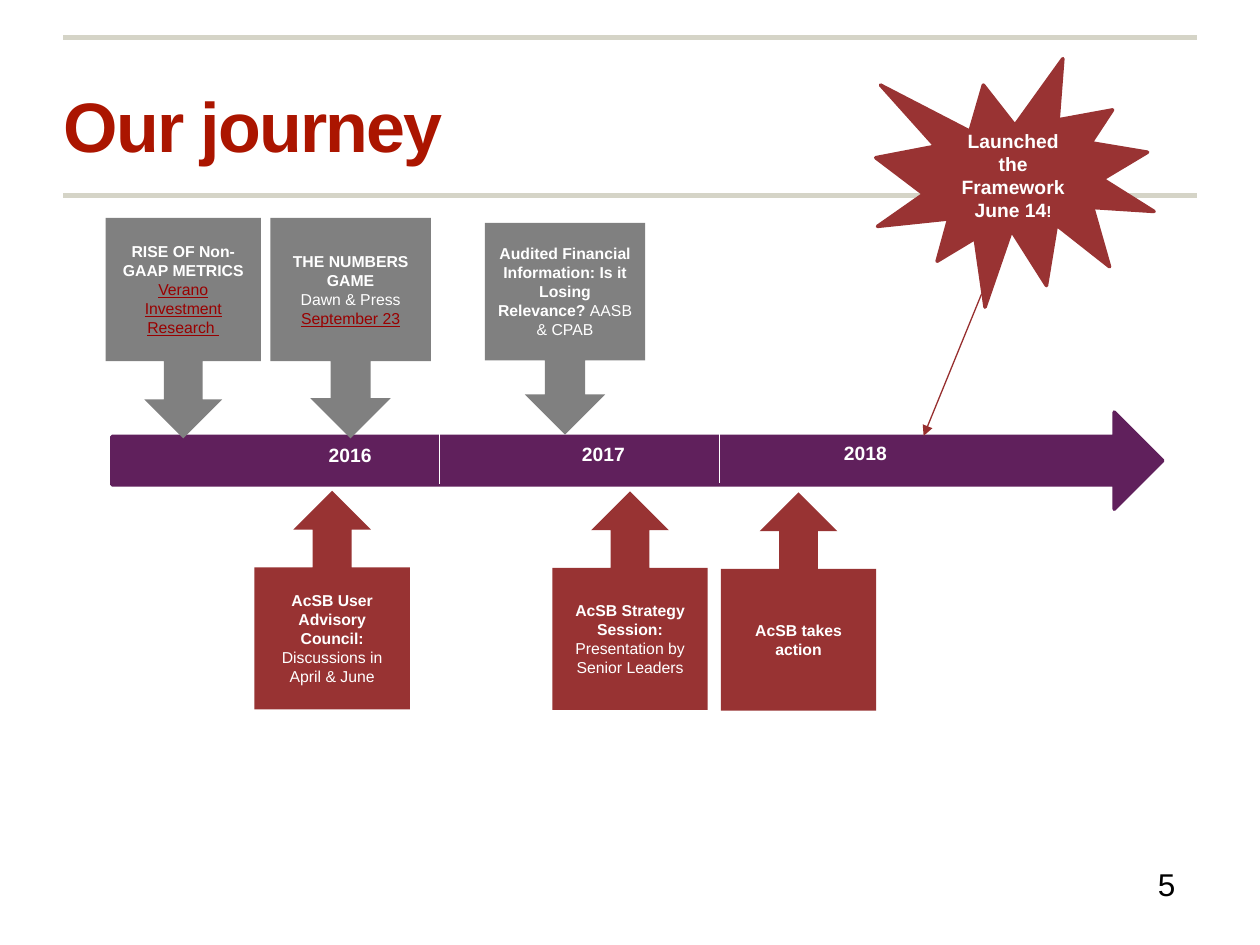
"""Build the timeline slide "Our journey"."""
import pptx
import pptx.util
import pptx.dml.color
import pptx.enum.shapes
import pptx.enum.text
import pptx.oxml.ns
import lxml.etree

Pt = pptx.util.Pt
Kind = pptx.enum.shapes.MSO_SHAPE
Align = pptx.enum.text.PP_ALIGN
Anchor = pptx.enum.text.MSO_ANCHOR
qn = pptx.oxml.ns.qn
tint = {"rule": "D5D4C7", "title": "AB1500", "bar": "60205C", "gray": "808080",
        "red": "983333", "burst": "993333", "arrow": "972F2F", "link": "990000",
        "white": "FFFFFF", "black": "000000"}
tint = {key: pptx.dml.color.RGBColor.from_string(code) for key, code in tint.items()}


def write(shape, rows, size, color="white", align=Align.CENTER, wrap=True):
    frame = shape.text_frame
    frame.word_wrap = wrap
    for i, row in enumerate(rows):
        para = frame.paragraphs[0] if i == 0 else frame.add_paragraph()
        para.alignment = align
        para.font.name = "Arial"
        para.font.size = Pt(size)
        para.font.color.rgb = tint[color]
        for text, style in row:
            run = para.add_run()
            run.text = text
            run.font.bold = style == "bold"
            if style == "link":
                run.font.underline = True
                run.font.color.rgb = tint["link"]
    return frame


def draw(kind, box, fill, edge=0):
    shape = shapes.add_shape(kind, *map(Pt, box))
    shape.shadow.inherit = False
    shape.fill.solid()
    shape.fill.fore_color.rgb = tint[fill]
    if edge:
        shape.line.color.rgb = tint[fill]
        shape.line.width = Pt(edge)
    else:
        shape.line.fill.background()
    shape.text_frame.vertical_anchor = Anchor.MIDDLE
    return shape


deck = pptx.Presentation()
deck.slide_width, deck.slide_height = Pt(720), Pt(540)
slide = deck.slides.add_slide(deck.slide_layouts[6])
shapes = slide.shapes

title = shapes.add_textbox(Pt(36.5), Pt(28), Pt(657), Pt(86.4))
frame = write(title, [[("Our journey", "bold")]], 40, "title", Align.LEFT)
frame.vertical_anchor = Anchor.MIDDLE
frame.margin_left = frame.margin_right = frame.margin_top = frame.margin_bottom = 0
frame.paragraphs[0].runs[0].font._element.set("spc", "-100")

page = shapes.add_textbox(Pt(654.5), Pt(491), Pt(36.7), Pt(28.8))
write(page, [[("5", "plain")]], 18, "black", Align.LEFT, False)

draw(Kind.RIGHT_ARROW, (64, 235.5, 600.5, 55.5), "bar", 2)

down, up = Kind.DOWN_ARROW_CALLOUT, Kind.UP_ARROW_CALLOUT
cards = [
    (down, (154.5, 124.5, 91.7, 126), "gray",
     [[("THE NUMBERS GAME", "bold")], [("Dawn & Press", "plain")],
      [("September 23", "link")]]),
    (down, (60.3, 124.5, 88.8, 126), "gray",
     [[("RISE OF Non-GAAP METRICS", "bold")],
      [("Verano Investment Research ", "link")]]),
    (down, (277, 127.3, 91.7, 121), "gray",
     [[("Audited Financial Information: Is it Losing Relevance? ", "bold"),
       ("AASB & CPAB", "plain")]]),
    (up, (145.4, 280.5, 88.8, 124.8), "red",
     [[("AcSB User Advisory Council:", "bold"),
       (" Discussions in April & June", "plain")]]),
    (up, (315.6, 280.8, 88.8, 124.8), "red",
     [[("AcSB Strategy Session: ", "bold"),
       ("Presentation by Senior Leaders", "plain")]]),
    (up, (411.9, 281.3, 88.8, 124.8), "red", [[("AcSB takes action", "bold")]]),
]
for kind, box, fill, rows in cards:
    write(draw(kind, box, fill), rows, 9)

years = [("2016", 144, 249.8, Align.CENTER), ("2017", 288.7, 249.1, Align.CENTER),
         ("2018", 475.2, 248.4, Align.LEFT)]
for year, left, top, align in years:
    label = shapes.add_textbox(Pt(left), Pt(top), Pt(112.3), Pt(21))
    write(label, [[(year, "bold")]], 11, align=align)

burst = draw(Kind.EXPLOSION1, (500.4, 33.5, 159.1, 142), "burst", 2)
write(burst, [[("Launched", "bold")], [("the Framework", "bold")],
              [("June 14", "bold"), ("!", "bold")]], 11)
burst.text_frame.paragraphs[2].runs[1].font.size = Pt(9)

lines = [((36, 21.6, 684, 21.6), "rule", 3), ((36, 111.6, 684, 111.6), "rule", 3),
         ((251.3, 247, 251.3, 276.5), "white", 0.75),
         ((411.1, 246.5, 411.1, 276), "white", 0.75),
         ((561, 167.8, 527.8, 249.1), "arrow", 0.75)]
for ends, color, width in lines:
    line = shapes.add_connector(pptx.enum.shapes.MSO_CONNECTOR.STRAIGHT, *map(Pt, ends))
    line.line.color.rgb = tint[color]
    line.line.width = Pt(width)
    lxml.etree.SubElement(line._element.spPr, qn("a:effectLst"))
    if color == "arrow":
        lxml.etree.SubElement(line.line._get_or_add_ln(), qn("a:tailEnd"), type="triangle")
    if color == "rule":
        shapes._spTree.insert(2, line._element)

deck.save("out.pptx")
